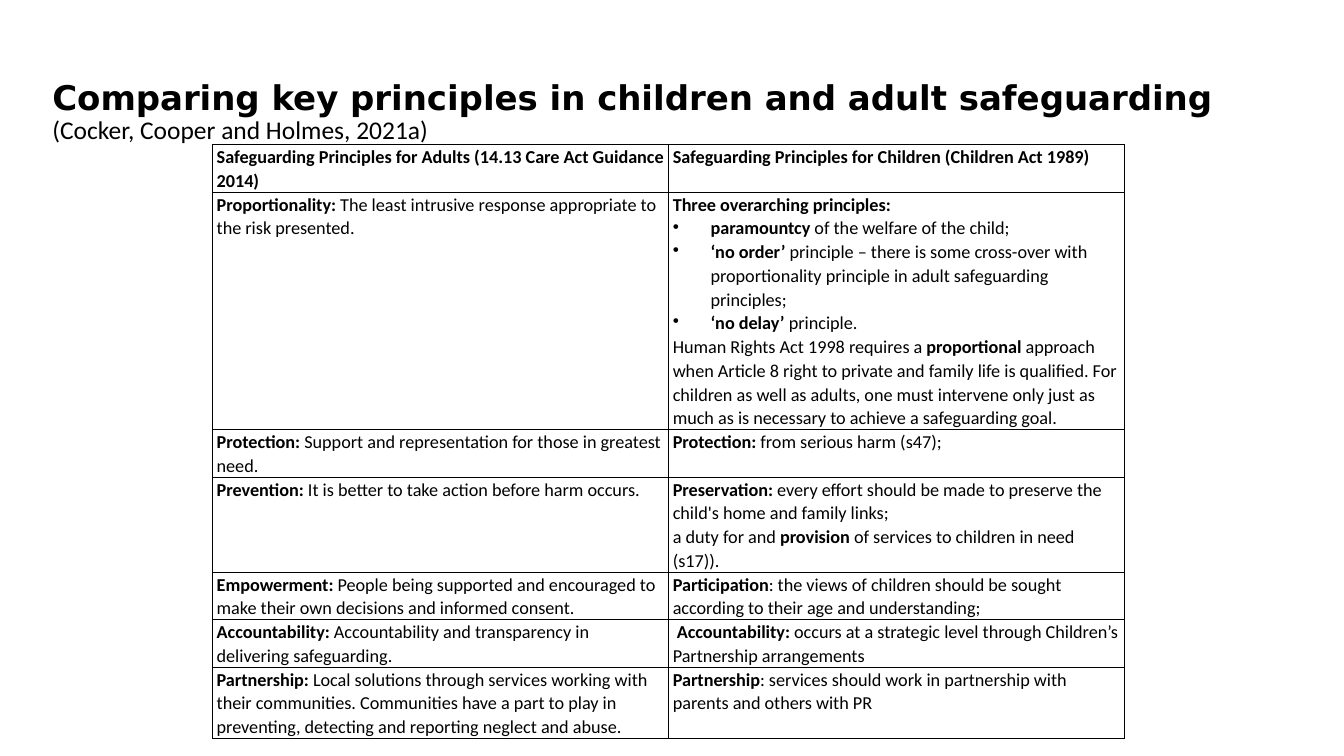
from lxml import etree
from pptx import Presentation
from pptx import util as u
from pptx.dml import color
from pptx.enum import text
from pptx.oxml import ns

COLORS = {"ink": "000000", "paper": "FFFFFF"}
PRINCIPLES = [
    (19, ["**Safeguarding Principles for Adults (14.13 Care Act Guidance 2014)**"],
     ["**Safeguarding Principles for Children (Children Act 1989)**"]),
    (130, ["**Proportionality: **The least intrusive response appropriate to the risk presented."],
     ["**Three overarching principles:**",
      "•**paramountcy** of the welfare of the child;",
      "•**‘no order’ **principle – there is some cross-over with proportionality principle "
      "in adult safeguarding principles;",
      "•**‘no delay’ **principle.",
      "Human Rights Act 1998 requires a **proportional **approach when Article 8 right to "
      "private and family life is qualified. For children as well as adults, one must intervene "
      "only just as much as is necessary to achieve a safeguarding goal."]),
    (19, ["**Protection:** Support and representation for those in greatest need."],
     ["**Protection:** from serious harm (s47);"]),
    (40, ["**Prevention:** It is better to take action before harm occurs."],
     ["**Preservation:** every effort should be made to preserve the child's home and family links;",
      "a duty for and **provision** of services to children in need (s17))."]),
    (28, ["**Empowerment: **People being supported and encouraged to make their own decisions "
          "and informed consent."],
     ["**Participation**: the views of children should be sought according to their age "
      "and understanding;"]),
    (27, ["**Accountability: **Accountability and transparency in delivering safeguarding."],
     [" **Accountability: **occurs at a strategic level through Children’s Partnership arrangements"]),
    (46, ["**Partnership: **Local solutions through services working with their communities. "
          "Communities have a part to play in preventing, detecting and reporting neglect and abuse."],
     ["**Partnership**: services should work in partnership with parents and others with PR"]),
]


def write(paragraph, words, size=13, font="Calibri", ink="ink", spacing=1.07):
    """Add words to a paragraph, with ** switching bold on and off."""
    paragraph.alignment = text.PP_ALIGN.LEFT
    paragraph.line_spacing = spacing
    for position, part in enumerate(words.split("**")):
        if part:
            run = paragraph.add_run()
            run.text = part
            run.font.size = u.Pt(size)
            run.font.name = font
            run.font.bold = position % 2 == 1
            run.font.color.rgb = color.RGBColor.from_string(COLORS[ink])


class ComparisonSlide:
    """Holds the slide and the style of its title and table."""

    def __init__(self, deck):
        self.slide = deck.slides.add_slide(deck.slide_layouts[5])
        self.indent = u.Pt(27)
        self.border = u.Pt(1)

    def heading(self, left, top, width, height, parts):
        """Place the title and write its differently formatted parts."""
        title = self.slide.shapes.title
        title.left, title.top = u.Pt(left), u.Pt(top)
        title.width, title.height = u.Pt(width), u.Pt(height)
        frame = title.text_frame
        frame.word_wrap = True
        frame.auto_size = text.MSO_AUTO_SIZE.NONE
        frame.vertical_anchor = text.MSO_ANCHOR.MIDDLE
        for words, style in parts:
            write(frame.paragraphs[0], words, spacing=0.9, **style)

    def table(self, left, top, width, rows):
        """Add the two-column table of principles."""
        total = sum(height for height, *_ in rows)
        grid = self.slide.shapes.add_table(
            len(rows), 2, u.Pt(left), u.Pt(top), u.Pt(width), u.Pt(total)).table
        grid.first_row = grid.horz_banding = False
        for row, (height, *sides) in zip(grid.rows, rows):
            row.height = u.Pt(height)
            for cell, entries in zip(row.cells, sides):
                self.cell(cell, entries)

    def cell(self, cell, entries):
        """Format one cell and write its paragraphs."""
        cell.margin_left = cell.margin_right = u.Pt(3)
        cell.margin_top = cell.margin_bottom = 0
        properties = cell._tc.get_or_add_tcPr()
        for side in ("a:lnL", "a:lnR", "a:lnT", "a:lnB"):
            line = etree.SubElement(properties, ns.qn(side), w=str(self.border))
            fill = etree.SubElement(line, ns.qn("a:solidFill"))
            etree.SubElement(fill, ns.qn("a:srgbClr"), val=COLORS["ink"])
        cell.fill.solid()
        cell.fill.fore_color.rgb = color.RGBColor.from_string(COLORS["paper"])
        for number, entry in enumerate(entries):
            frame = cell.text_frame
            paragraph = frame.add_paragraph() if number else frame.paragraphs[0]
            write(paragraph, entry.removeprefix("•"))
            if entry.startswith("•"):
                self.bullet(paragraph)

    def bullet(self, paragraph):
        """Give a paragraph a hanging bullet."""
        properties = paragraph._p.get_or_add_pPr()
        properties.set("marL", str(self.indent))
        properties.set("indent", str(-self.indent))
        etree.SubElement(properties, ns.qn("a:buChar"), char="•")


def main():
    """Build and save the slide."""
    deck = Presentation()
    deck.slide_width, deck.slide_height = u.Pt(960), u.Pt(540)
    comparison = ComparisonSlide(deck)
    comparison.heading(30.2, 69.8, 849.6, 21.6, [
        ("**Comparing key principles in children and adult safeguarding **",
         {"size": 24.3, "font": "DejaVu Sans"}),
        ("(Cocker, Cooper and Holmes, 2021a)", {"size": 18.2}),
    ])
    comparison.table(151.8, 103.5, 651.6, PRINCIPLES)
    deck.save("out.pptx")


if __name__ == "__main__":
    main()
